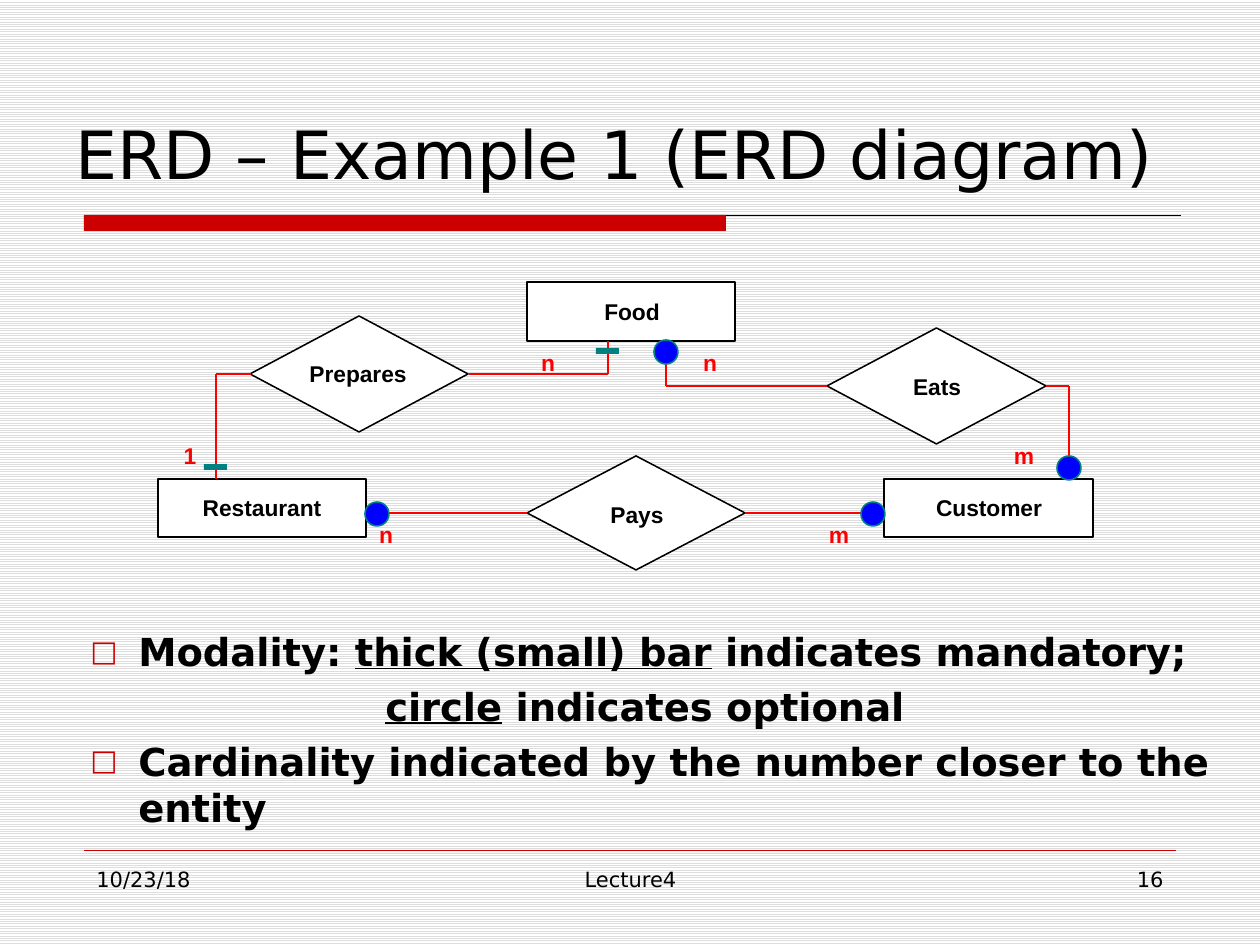
"""Build an entity-relationship slide about food, restaurants and customers."""
from lxml import etree
from pptx import Presentation
from pptx import util as u
from pptx.dml.color import RGBColor
from pptx.enum import dml, shapes, text
from pptx.oxml.ns import qn

PX = u.Inches(1) / 126
COLORS = {
    "ink": "000000", "paper": "FFFFFF", "stripe": "DDDDDD", "accent": "CC0000",
    "link": "FF0000", "bar": "008080", "circle": "0000FF",
}
RGB = {name: RGBColor.from_string(value) for name, value in COLORS.items()}
KIND = shapes.MSO_SHAPE
ALIGN = text.PP_ALIGN

presentation = Presentation()
presentation.slide_width = round(1260 * PX)
presentation.slide_height = round(945 * PX)
slide = presentation.slides.add_slide(presentation.slide_layouts[6])

background = slide.background.fill
background.patterned()
background.pattern = dml.MSO_PATTERN.LIGHT_HORIZONTAL
background.fore_color.rgb = RGB["stripe"]
background.back_color.rgb = RGB["paper"]


def add_text(box, paragraphs, size, font="DejaVu Sans", bold=False, color="ink",
             align=ALIGN.LEFT, frame_format=None):
    """Add a text box whose paragraphs are lists of (wording, underlined) runs."""
    shape = slide.shapes.add_textbox(*(round(value * PX) for value in box))
    frame = shape.text_frame
    for name, value in {"word_wrap": True, **(frame_format or {})}.items():
        setattr(frame, name, value)
    for index, runs in enumerate(paragraphs):
        paragraph = frame.add_paragraph() if index else frame.paragraphs[0]
        paragraph.alignment = align
        for wording, underlined in runs:
            run = paragraph.add_run()
            run.text = wording
            run_format = {"size": u.Pt(size), "name": font, "bold": bold}
            if underlined:
                run_format["underline"] = True
            for name, value in run_format.items():
                setattr(run.font, name, value)
            run.font.color.rgb = RGB[color]
    return frame


def add_filled(kind, box, fill, line=None):
    """Add a preset shape with a plain fill and an optional outline."""
    shape = slide.shapes.add_shape(kind, *(round(value * PX) for value in box))
    shape.shadow.inherit = False
    shape.fill.solid()
    shape.fill.fore_color.rgb = RGB[fill]
    if line:
        shape.line.color.rgb = RGB[line]
        shape.line.width = u.Pt(0.88)
    else:
        shape.line.fill.background()


add_filled(KIND.RECTANGLE, (84, 215, 642, 16), "accent")

for wording, left, width, align in [
    ("10/23/18", 84, 273, ALIGN.LEFT),
    ("Lecture4", 431, 399, ALIGN.CENTER),
    ("16", 903, 273, ALIGN.RIGHT),
]:
    add_text((left, 860, width, 66), [[(wording, False)]], 12, align=align)

add_text((63, 41, 1166, 158), [[("ERD – Example 1 (ERD diagram)", False)]], 38,
         frame_format={"vertical_anchor": text.MSO_ANCHOR.BOTTOM})

body = add_text((78, 622, 1160, 207), [
    [("Modality: ", False), ("thick (small) bar", True), (" indicates mandatory;", False)],
    [("circle", True), (" indicates optional", False)],
    [("Cardinality indicated by the number closer to the entity", False)],
], 22, bold=True)
for paragraph, margin, bulleted in zip(body.paragraphs, (48, 295, 48), (True, False, True)):
    paragraph.space_before = u.Pt(5)
    properties = paragraph._p.get_or_add_pPr()
    properties.set("marL", str(round(margin * PX)))
    if bulleted:
        properties.set("indent", str(round(-margin * PX)))
        bullet_color = etree.SubElement(properties, qn("a:buClr"))
        etree.SubElement(bullet_color, qn("a:srgbClr"), val=COLORS["accent"])
        etree.SubElement(properties, qn("a:buSzPct"), val="75000")
        etree.SubElement(properties, qn("a:buFont"), typeface="DejaVu Sans")
        etree.SubElement(properties, qn("a:buChar"), char="□")

nodes = [
    (KIND.RECTANGLE, (158, 479, 208, 58), "Restaurant", (262, 494)),
    (KIND.RECTANGLE, (527, 282, 208, 59), "Food", (632, 298)),
    (KIND.RECTANGLE, (884, 479, 209, 58), "Customer", (989, 494)),
    (KIND.DIAMOND, (827, 328, 219, 116), "Eats", (937, 373)),
    (KIND.DIAMOND, (250, 316, 218, 116), "Prepares", (358, 360)),
    (KIND.DIAMOND, (527, 456, 218, 114), "Pays", (637, 501)),
]
for kind, box, _, _ in nodes:
    add_filled(kind, box, "paper", "ink")

routes = [
    ("ink", 0.25, [(726, 215), (1181, 215)]),
    ("accent", 0.25, [(84, 850), (1176, 850)]),
    ("link", 0.88, [(527, 513), (365, 513)]),
    ("link", 0.88, [(745, 513), (884, 513)]),
    ("link", 0.88, [(251, 374), (216, 374), (216, 479)]),
    ("link", 0.88, [(469, 374), (608, 374), (608, 341)]),
    ("link", 0.88, [(827, 386), (666, 386), (666, 341)]),
    ("link", 0.88, [(1046, 386), (1069, 386), (1069, 479)]),
]
for color, width, points in routes:
    for start, end in zip(points, points[1:]):
        connector = slide.shapes.add_connector(
            shapes.MSO_CONNECTOR.STRAIGHT, *(round(value * PX) for value in start + end))
        connector.line.color.rgb = RGB[color]
        connector.line.width = u.Pt(width)
        etree.SubElement(connector._element.spPr, qn("a:effectLst"))

for left, top in [(204, 464), (596, 348)]:
    add_filled(KIND.RECTANGLE, (left, top, 23, 6), "bar")

for left, top in [(861, 502), (654, 340), (1057, 456), (365, 502)]:
    add_filled(KIND.OVAL, (left, top, 24, 24), "circle", "bar")

labels = [(wording, center, 140, "ink") for _, _, wording, center in nodes]
labels += [(wording, center, 40, "link") for wording, center in [
    ("1", (190, 442)), ("n", (710, 349)), ("n", (548, 349)),
    ("m", (1024, 442)), ("m", (839, 521)), ("n", (386, 521)),
]]
label_frame = {"word_wrap": False, "margin_left": 0, "margin_right": 0,
               "margin_top": 0, "margin_bottom": 0}
for wording, (center, top), width, color in labels:
    add_text((center - width // 2, top, width, 28), [[(wording, False)]], 13, "Arial",
             True, color, ALIGN.CENTER, label_frame)

presentation.save("out.pptx")
